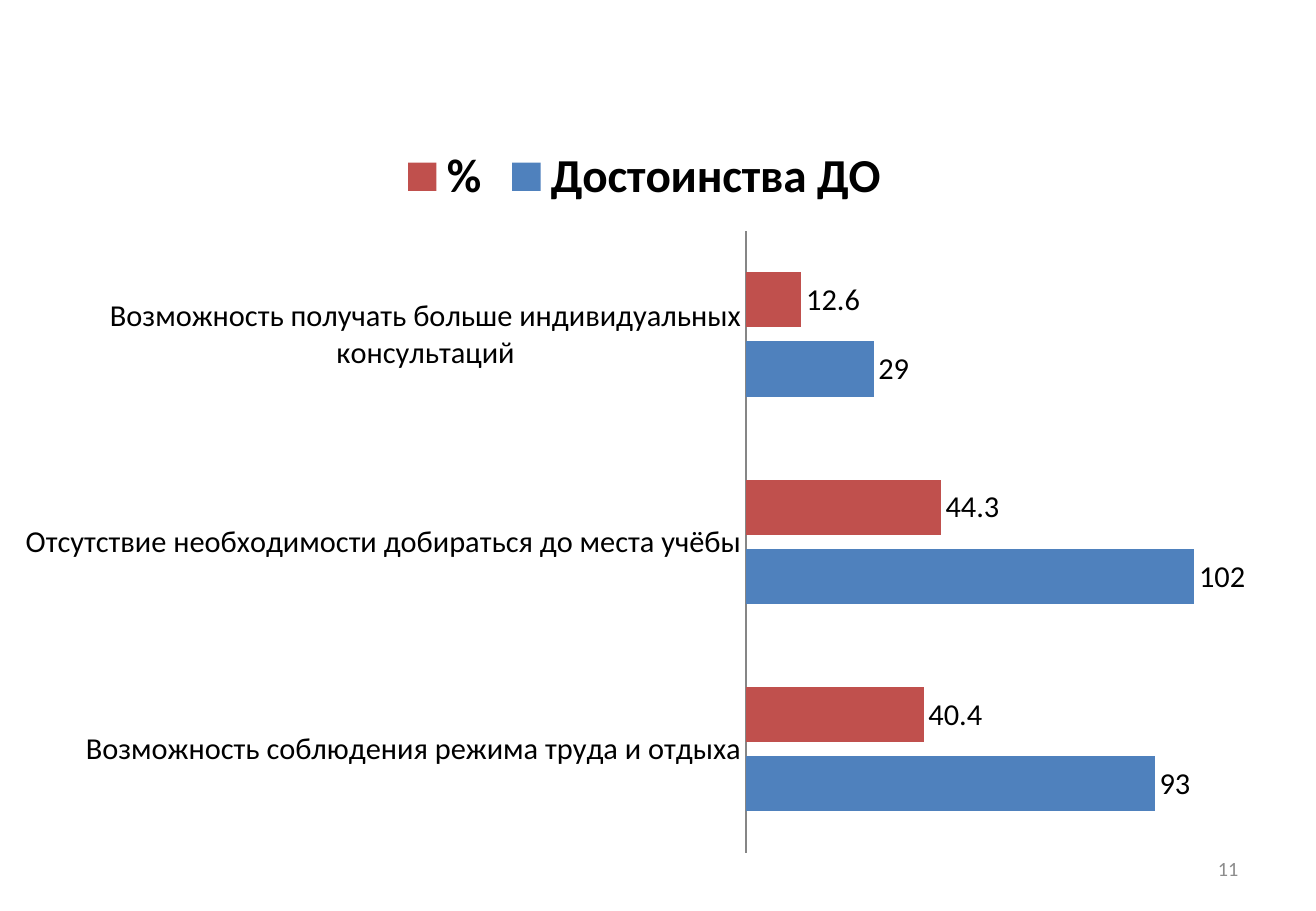
from dataclasses import dataclass

from lxml.etree import SubElement
from pptx import Presentation
from pptx.chart.chart import Chart
from pptx.chart.data import CategoryChartData
from pptx.dml.color import RGBColor
from pptx.enum.chart import XL_CHART_TYPE as ChartType
from pptx.enum.chart import XL_LABEL_POSITION as LabelPosition
from pptx.enum.chart import XL_LEGEND_POSITION as LegendPosition
from pptx.enum.chart import XL_TICK_MARK as TickMark
from pptx.enum.text import MSO_ANCHOR, PP_ALIGN
from pptx.oxml.ns import qn
from pptx.slide import Slide
from pptx.util import Inches, Pt

FONT = "Calibri"
COLORS = {
    "blue": "4F81BD",
    "red": "C0504D",
    "text": "000000",
    "axis": "868686",
    "number": "8C8C8C",
}
CATEGORIES = [
    "Возможность соблюдения режима труда и отдыха",
    "Отсутствие необходимости добираться до места учёбы",
    "Возможность получать больше индивидуальных консультаций",
]


@dataclass
class BarSeries:
    name: str
    values: list[float]
    color: str


@dataclass
class Box:
    """Place and size in inches."""

    left: float
    top: float
    width: float
    height: float


SERIES = [
    BarSeries("Достоинства ДО ", [93, 102, 29], "blue"),
    BarSeries("%", [40.4, 44.3, 12.6], "red"),
]
CHART = Box(0, 1.07, 10.69, 6.06)
PLOT = Box(6.14, 1.9, 4.34, 5.12)
NUMBER = Box(7.76, 6.95, 2.53, 0.4)


def color(name: str) -> RGBColor:
    return RGBColor.from_string(COLORS[name])


def lengths(box: Box) -> tuple[Inches, Inches, Inches, Inches]:
    return Inches(box.left), Inches(box.top), Inches(box.width), Inches(box.height)


def place_plot_area(chart: Chart) -> None:
    plot_area = chart.plots[0]._element.getparent()
    layout = plot_area.find(qn("c:layout"))
    if layout is None:
        layout = SubElement(plot_area, qn("c:layout"))
        plot_area.insert(0, layout)
    fractions = {
        "x": (PLOT.left - CHART.left) / CHART.width,
        "y": (PLOT.top - CHART.top) / CHART.height,
        "w": PLOT.width / CHART.width,
        "h": PLOT.height / CHART.height,
    }
    manual = SubElement(layout, qn("c:manualLayout"))
    SubElement(manual, qn("c:layoutTarget")).set("val", "inner")
    for side in "xy":
        SubElement(manual, qn(f"c:{side}Mode")).set("val", "edge")
    for side, fraction in fractions.items():
        SubElement(manual, qn(f"c:{side}")).set("val", f"{fraction:.4f}")


def add_bar_chart(slide: Slide) -> None:
    data = CategoryChartData()
    data.categories = CATEGORIES
    for series in SERIES:
        data.add_series(series.name, series.values)
    chart = slide.shapes.add_chart(ChartType.BAR_CLUSTERED, *lengths(CHART), data).chart
    chart.has_title = False
    chart.font.name = FONT
    chart.font.size = Pt(18)
    chart.font.color.rgb = color("text")
    place_plot_area(chart)

    # Legend
    chart.has_legend = True
    chart.legend.position = LegendPosition.TOP
    chart.legend.include_in_layout = False
    chart.legend.font.name = FONT
    chart.legend.font.size = Pt(28)
    chart.legend.font.bold = True

    # Axes
    category_axis = chart.category_axis
    category_axis.major_tick_mark = TickMark.NONE
    category_axis.minor_tick_mark = TickMark.NONE
    category_axis.format.line.color.rgb = color("axis")
    category_axis.format.line.width = Pt(0.75)
    value_axis = chart.value_axis
    value_axis.has_major_gridlines = False
    value_axis.minimum_scale = 0
    value_axis.maximum_scale = 120
    value_axis.visible = False

    # Bars and their values
    plot = chart.plots[0]
    plot.vary_by_categories = False
    plot.gap_width = 150
    plot.overlap = -25
    for bars, series in zip(plot.series, SERIES):
        bars.format.fill.solid()
        bars.format.fill.fore_color.rgb = color(series.color)
        labels = bars.data_labels
        labels.show_value = True
        labels.number_format = "General"
        labels.number_format_is_linked = False
        labels.position = LabelPosition.OUTSIDE_END


def add_slide_number(slide: Slide) -> None:
    text_frame = slide.shapes.add_textbox(*lengths(NUMBER)).text_frame
    text_frame.word_wrap = True
    text_frame.vertical_anchor = MSO_ANCHOR.MIDDLE
    text_frame.text = "11"
    paragraph = text_frame.paragraphs[0]
    paragraph.alignment = PP_ALIGN.RIGHT
    font = paragraph.runs[0].font
    font.name = FONT
    font.size = Pt(12)
    font.color.rgb = color("number")


def main() -> None:
    presentation = Presentation()
    presentation.slide_width = Inches(10.83)
    presentation.slide_height = Inches(7.5)
    slide = presentation.slides.add_slide(presentation.slide_layouts[6])
    add_slide_number(slide)
    add_bar_chart(slide)
    presentation.save("out.pptx")


if __name__ == "__main__":
    main()
